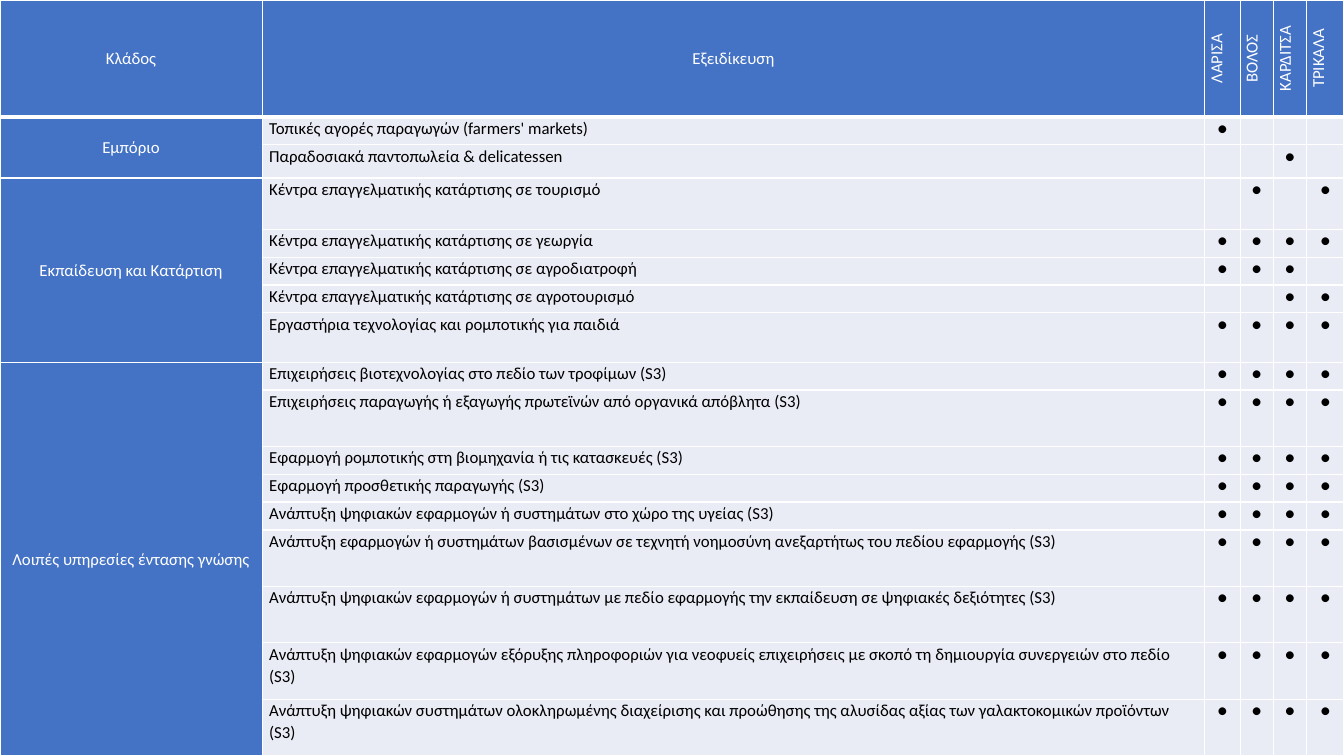
from lxml.etree import SubElement
from pptx import Presentation
from pptx.dml.color import RGBColor
from pptx.enum.text import MSO_ANCHOR, PP_ALIGN
from pptx.oxml import parse_xml
from pptx.oxml.ns import nsdecls, qn
from pptx.util import Inches, Pt

BLUE = RGBColor(0x44, 0x72, 0xC4)
PALE = RGBColor(0xE9, 0xEB, 0xF5)
WHITE = RGBColor(0xFF, 0xFF, 0xFF)
BLACK = RGBColor(0x00, 0x00, 0x00)

FONT, SIZE = "Calibri", 12
COL_WIDTHS = [2.6, 9.35, 0.35, 0.33, 0.33, 0.37]
HEADER_H, TALL = 1.16, 0.56
HEADERS = ["Κλάδος", "Εξειδίκευση"]
CITIES = ["ΛΑΡΙΣΑ", "ΒΟΛΟΣ", "ΚΑΡΔΙΤΣΑ", "ΤΡΙΚΑΛΑ"]
ALL = "ΛΒΚΤ"  # initials of the cities that get a dot

# Sector -> (specialisation, cities, row height or None for a standard row)
SECTORS = {
    "Εμπόριο": [
        ("Τοπικές αγορές παραγωγών (farmers' markets)", "Λ", None),
        ("Παραδοσιακά παντοπωλεία & delicatessen", "Κ", 0.33),
    ],
    "Εκπαίδευση και Κατάρτιση": [
        ("Κέντρα επαγγελματικής κατάρτισης σε τουρισμό", "ΒΤ", 0.51),
        ("Κέντρα επαγγελματικής κατάρτισης σε γεωργία", ALL, None),
        ("Κέντρα επαγγελματικής κατάρτισης σε αγροδιατροφή", "ΛΒΚ", None),
        ("Κέντρα επαγγελματικής κατάρτισης σε αγροτουρισμό", "ΚΤ", None),
        ("Εργαστήρια τεχνολογίας και ρομποτικής για παιδιά", ALL, 0.49),
    ],
    "Λοιπές υπηρεσίες έντασης γνώσης": [
        ("Επιχειρήσεις βιοτεχνολογίας στο πεδίο των τροφίμων (S3)", ALL, None),
        ("Επιχειρήσεις παραγωγής ή εξαγωγής πρωτεϊνών από οργανικά απόβλητα (S3)", ALL, TALL),
        ("Εφαρμογή ρομποτικής στη βιομηχανία ή τις κατασκευές (S3)", ALL, None),
        ("Εφαρμογή προσθετικής παραγωγής (S3)", ALL, None),
        ("Ανάπτυξη ψηφιακών εφαρμογών ή συστημάτων στο χώρο της υγείας (S3)", ALL, None),
        ("Ανάπτυξη εφαρμογών ή συστημάτων βασισμένων σε τεχνητή νοημοσύνη "
         "ανεξαρτήτως του πεδίου εφαρμογής (S3)", ALL, TALL),
        ("Ανάπτυξη ψηφιακών εφαρμογών ή συστημάτων με πεδίο εφαρμογής την "
         "εκπαίδευση σε ψηφιακές δεξιότητες (S3)", ALL, TALL),
        ("Ανάπτυξη ψηφιακών εφαρμογών εξόρυξης πληροφοριών για νεοφυείς επιχειρήσεις "
         "με σκοπό τη δημιουργία συνεργειών στο πεδίο (S3)", ALL, TALL),
        ("Ανάπτυξη ψηφιακών συστημάτων ολοκληρωμένης διαχείρισης και προώθησης "
         "της αλυσίδας αξίας των γαλακτοκομικών προϊόντων (S3)", ALL, TALL),
    ],
}

CENTER = {"alignment": PP_ALIGN.CENTER}
SPACING = {"line_spacing": 1.07, "space_after": Pt(8)}


def set_borders(cell, bottom=1):
    tcPr = cell._tc.get_or_add_tcPr()
    widths = {"lnL": 1, "lnR": 1, "lnT": 1, "lnB": bottom}
    for i, (side, width) in enumerate(widths.items()):
        tcPr.insert(i, parse_xml(
            f'<a:{side} {nsdecls("a")} w="{Pt(width)}"><a:solidFill>'
            f'<a:srgbClr val="{WHITE}"/></a:solidFill></a:{side}>'))


def format_cell(cell, text="", fill=PALE, color=BLACK, para=None,
                anchor=MSO_ANCHOR.TOP, inset=0.07, bottom=1):
    layout = {"margin_left": Inches(inset), "margin_right": Inches(inset),
              "margin_top": 0, "margin_bottom": 0, "vertical_anchor": anchor}
    for name, value in layout.items():
        setattr(cell, name, value)
    cell.fill.solid()
    cell.fill.fore_color.rgb = fill
    set_borders(cell, bottom)
    p = cell.text_frame.paragraphs[0]
    for name, value in {**SPACING, **(para or {})}.items():
        setattr(p, name, value)
    if text:
        r = p.add_run()
        r.text = text
        for name, value in {"name": FONT, "size": Pt(SIZE)}.items():
            setattr(r.font, name, value)
        r.font.color.rgb = color
    else:
        # Keep empty cells from stretching their row
        SubElement(p._p, qn("a:endParaRPr"), sz=str(SIZE * 100))


def add_header(table):
    style = {"fill": BLUE, "color": WHITE, "para": CENTER,
             "anchor": MSO_ANCHOR.MIDDLE, "inset": 0.05, "bottom": 3}
    for col, text in enumerate(HEADERS + CITIES):
        cell = table.cell(0, col)
        format_cell(cell, text, **style)
        if text in CITIES:
            cell._tc.get_or_add_tcPr().set("vert", "vert270")


def add_sector(table, top, name, rows):
    # Merged sector label
    for i in range(len(rows)):
        format_cell(table.cell(top + i, 0), name if i == 0 else "", fill=BLUE,
                    color=WHITE, para=CENTER, anchor=MSO_ANCHOR.MIDDLE)
    table.cell(top, 0).merge(table.cell(top + len(rows) - 1, 0))
    # Specialisations and city dots
    for i, (text, marks, _) in enumerate(rows, top):
        format_cell(table.cell(i, 1), text)
        for col, city in enumerate(CITIES, len(HEADERS)):
            format_cell(table.cell(i, col), "●" if city[0] in marks else "", para=CENTER)


def add_sector_table(slide, left, top, width, height):
    heights = [HEADER_H] + [h for rows in SECTORS.values() for _, _, h in rows]
    fixed = sum(Inches(h) for h in heights if h)
    standard = (height - fixed) // heights.count(None)
    table = slide.shapes.add_table(
        len(heights), len(COL_WIDTHS), left, top, width, height).table
    for column, w in zip(table.columns, COL_WIDTHS):
        column.width = Inches(w)
    for row, h in zip(table.rows, heights):
        row.height = Inches(h) if h else standard

    add_header(table)
    first = 1
    for name, rows in SECTORS.items():
        add_sector(table, first, name, rows)
        first += len(rows)


def main():
    prs = Presentation()
    prs.slide_width, prs.slide_height = Inches(13.33), Inches(7.5)
    slide = prs.slides.add_slide(prs.slide_layouts[6])
    add_sector_table(slide, 0, 0, prs.slide_width, prs.slide_height)
    prs.save("out.pptx")


if __name__ == "__main__":
    main()
